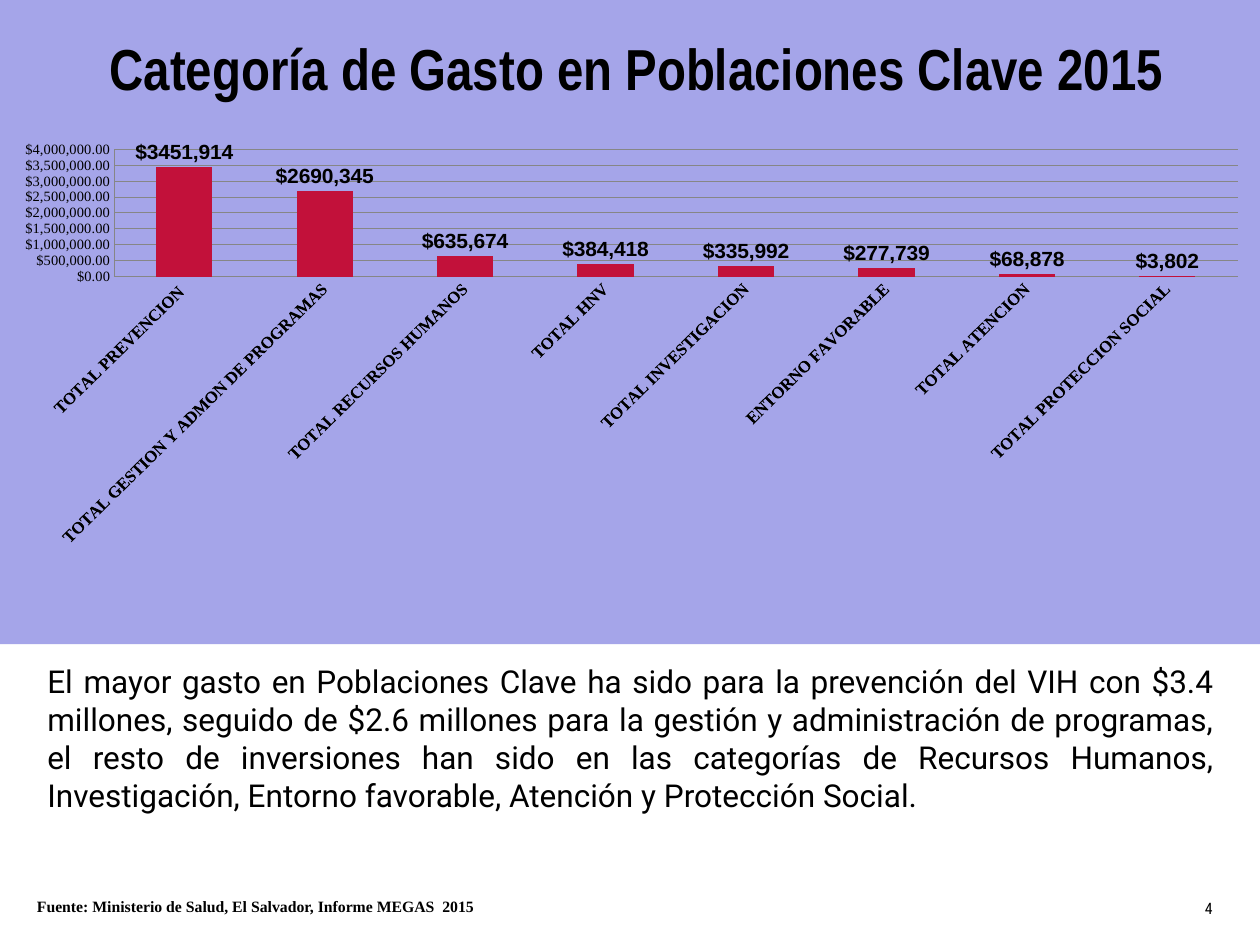
from dataclasses import dataclass

from pptx import Presentation
from pptx.chart.data import CategoryChartData
from pptx.dml.color import RGBColor
from pptx.enum.chart import XL_CHART_TYPE, XL_LABEL_POSITION, XL_TICK_MARK
from pptx.enum.shapes import MSO_SHAPE
from pptx.enum.text import MSO_ANCHOR, MSO_AUTO_SIZE, PP_ALIGN
from pptx.oxml import parse_xml
from pptx.oxml.ns import nsdecls
from pptx.util import Inches, Pt

COLUMN = XL_CHART_TYPE.COLUMN_CLUSTERED
OUTSIDE_END = XL_LABEL_POSITION.OUTSIDE_END
NO_TICK = XL_TICK_MARK.NONE
RECTANGLE = MSO_SHAPE.RECTANGLE
TOP, MIDDLE = MSO_ANCHOR.TOP, MSO_ANCHOR.MIDDLE
NO_FIT = MSO_AUTO_SIZE.NONE
LEFT, CENTER, JUSTIFY = PP_ALIGN.LEFT, PP_ALIGN.CENTER, PP_ALIGN.JUSTIFY


@dataclass(frozen=True)
class Theme:
    ink: RGBColor = RGBColor(0, 0, 0)
    paper: RGBColor = RGBColor(0xFF, 0xFF, 0xFF)
    panel: RGBColor = RGBColor(0xA5, 0xA5, 0xE9)
    bar: RGBColor = RGBColor(0xC2, 0x11, 0x3A)
    grid: RGBColor = RGBColor(0x86, 0x86, 0x86)
    title_size: int = 44
    body_size: int = 24
    label_size: int = 16
    category_size: int = 13
    note_size: int = 12
    axis_size: int = 11


THEME = Theme()


def style_font(font, name, size, bold=False):
    font.name = name
    font.size = Pt(size)
    font.bold = bold
    font.color.rgb = THEME.ink


def write(box, bounds, text, name, size, align, anchor=TOP, bold=False):
    box.left, box.top, box.width, box.height = map(Inches, bounds)
    frame = box.text_frame
    frame.word_wrap = True
    frame.auto_size = NO_FIT
    frame.vertical_anchor = anchor
    para = frame.paragraphs[0]
    para.alignment = align
    para.space_before = Pt(0)
    span = para.add_run()
    span.text = text
    style_font(span.font, name, size, bold)
    return para


deck = Presentation()
deck.slide_width = Inches(13.32)
deck.slide_height = Inches(9.99)
page = deck.slides.add_slide(deck.slide_layouts[1])
title = page.shapes.title
body = page.placeholders[1]

panel = page.shapes.add_shape(RECTANGLE, 0, 0, Inches(13.35), Inches(6.81))
source_note = page.shapes.add_shape(RECTANGLE, 0, 0, 0, 0)
for block, color in ((source_note, THEME.paper), (panel, THEME.panel)):
    block.shadow.inherit = False
    block.fill.solid()
    block.fill.fore_color.rgb = color
    block.line.fill.background()
    title.element.addprevious(block.element)

source_note.text_frame.margin_left = source_note.text_frame.margin_right = Inches(0.09)
source_note.text_frame.margin_top = source_note.text_frame.margin_bottom = Inches(0.04)
write(source_note, (0.3, 9.44, 12.72, 0.55),
      "Fuente: Ministerio de Salud, El Salvador, Informe MEGAS  2015",
      "Times New Roman", THEME.note_size, LEFT, bold=True)

write(title, (0.76, 0.29, 11.95, 0.84), "Categoría de Gasto en Poblaciones Clave 2015",
      "Arial Narrow", THEME.title_size, CENTER, MIDDLE, True)

summary = write(
    body, (0.4, 6.95, 12.53, 2.29),
    "El mayor gasto en Poblaciones Clave ha sido para la prevención del VIH con $3.4 millones, "
    "seguido de $2.6 millones para la gestión y administración de programas, el resto de "
    "inversiones han sido en las categorías de Recursos Humanos, Investigación, Entorno "
    "favorable, Atención y Protección Social.",
    "Roboto", THEME.body_size, JUSTIFY)
properties = summary._p.get_or_add_pPr()
properties.set("marL", "0")
properties.set("indent", "0")
properties.append(parse_xml(f"<a:buNone {nsdecls('a')}/>"))

page_number = page.shapes.add_textbox(0, 0, 0, 0)
write(page_number, (12.64, 9.45, 0.28, 0.3), "4", "Roboto Condensed", THEME.note_size, JUSTIFY)

spending = [
    ("TOTAL PREVENCION ", 3451914, "$3451,914"),
    ("TOTAL GESTION Y ADMON DE PROGRAMAS", 2690345, "$2690,345"),
    ("TOTAL RECURSOS HUMANOS", 635674, "$635,674"),
    ("TOTAL HNV", 384418, "$384,418"),
    ("TOTAL INVESTIGACION", 335992, "$335,992"),
    ("ENTORNO FAVORABLE", 277739, "$277,739"),
    ("TOTAL ATENCION", 68878, "$68,878"),
    ("TOTAL PROTECCION SOCIAL", 3802, "$3,802"),
]
chart_data = CategoryChartData(number_format="[$$-440A]#,##0.00")
chart_data.categories = [category for category, amount, label in spending]
chart_data.add_series("Series 1", [amount for category, amount, label in spending])
chart = page.shapes.add_chart(
    COLUMN, 0, Inches(1.49), Inches(13.35), Inches(4.29), chart_data).chart
chart.has_title = False
chart.has_legend = False
style_font(chart.font, "Times New Roman", THEME.axis_size)

plot = chart.plots[0]
plot.gap_width = 150
plot.vary_by_categories = False
bars = plot.series[0]
bars.format.fill.solid()
bars.format.fill.fore_color.rgb = THEME.bar
bars.data_labels.show_value = True
bars.data_labels.position = OUTSIDE_END
style_font(bars.data_labels.font, "Arial", THEME.label_size, True)
for index, (category, amount, label) in enumerate(spending):
    data_label = bars.points[index].data_label
    span = data_label.text_frame.paragraphs[0].add_run()
    span.text = label
    style_font(span.font, "Arial", THEME.label_size, True)
    data_label.position = OUTSIDE_END

amounts = chart.value_axis
amounts.minimum_scale = 0
amounts.maximum_scale = 4000000
amounts.major_unit = 500000
amounts.has_major_gridlines = True
amounts.major_gridlines.format.line.color.rgb = THEME.grid
amounts.tick_labels.number_format = "[$$-440A]#,##0.00"
amounts.tick_labels.number_format_is_linked = False
style_font(amounts.tick_labels.font, "Times New Roman", THEME.axis_size)

categories = chart.category_axis
style_font(categories.tick_labels.font, "Times New Roman", THEME.category_size, True)
categories._element.txPr.bodyPr.set("rot", "-2700000")
for axis in (amounts, categories):
    axis.major_tick_mark = NO_TICK
    axis.minor_tick_mark = NO_TICK
    axis.format.line.color.rgb = THEME.grid

deck.save("out.pptx")
